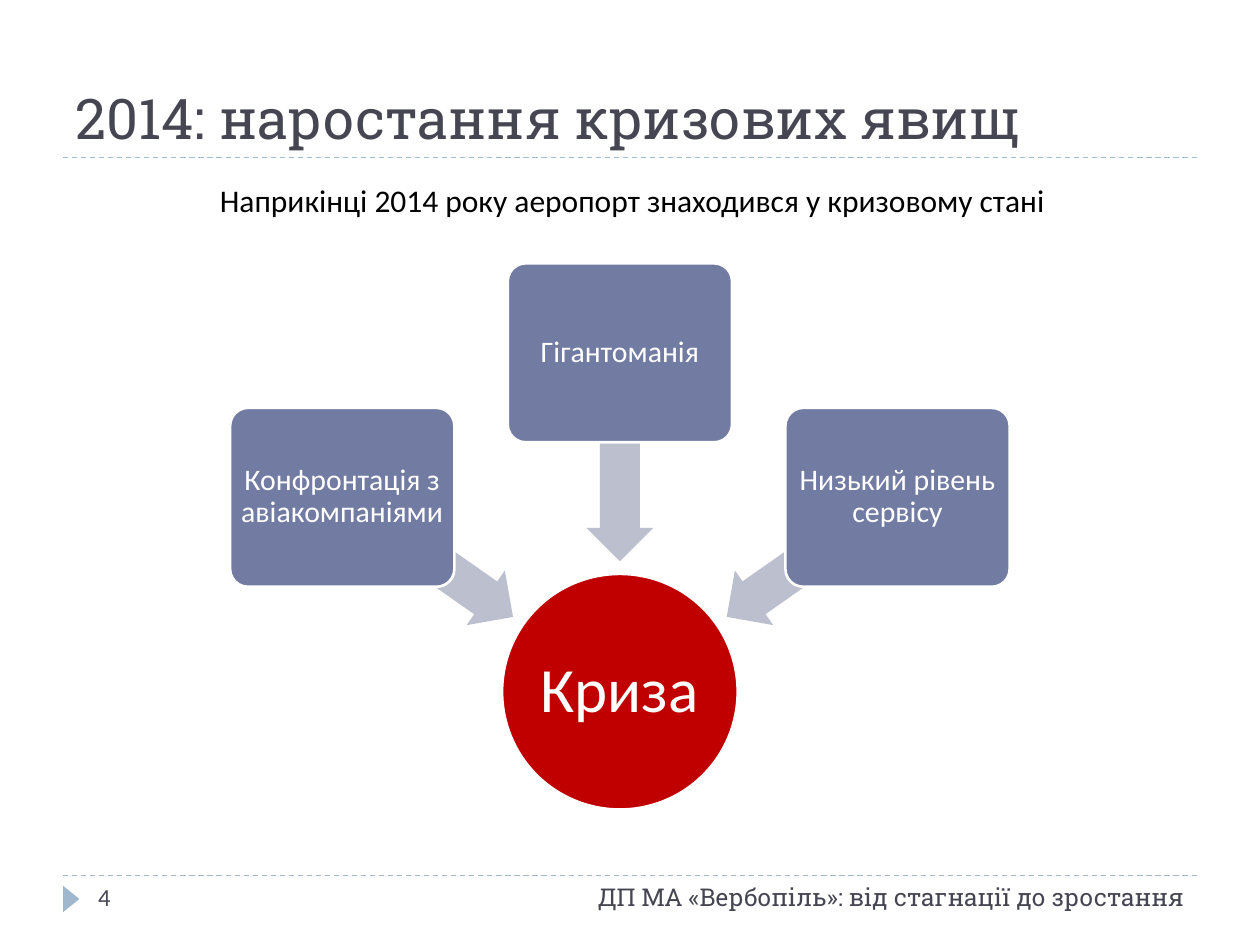
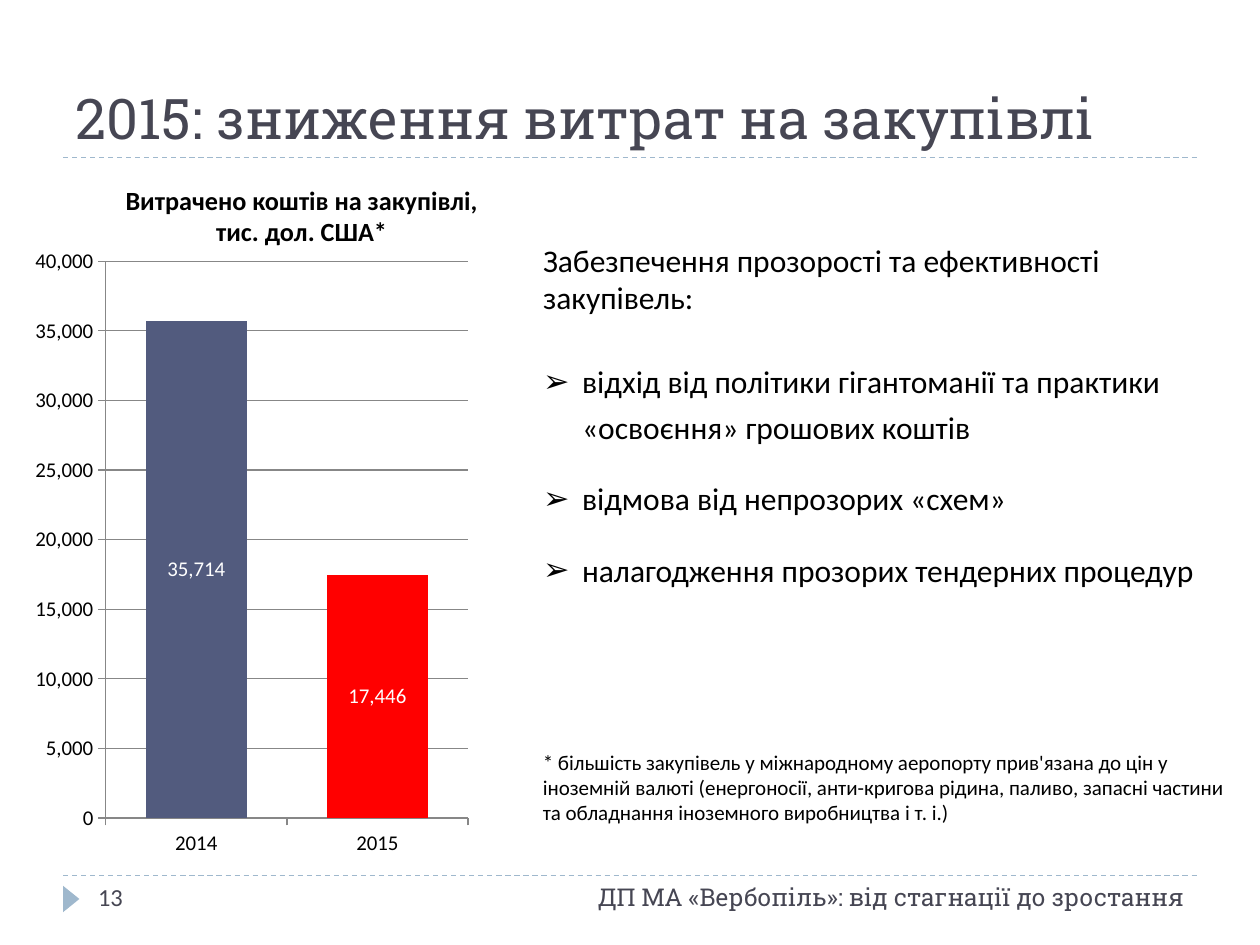
import math

import lxml.etree
import pptx
import pptx.chart.data
import pptx.dml.color
import pptx.enum.chart
import pptx.enum.dml
import pptx.enum.shapes
import pptx.enum.text
import pptx.oxml
import pptx.oxml.ns
import pptx.util

Inches = pptx.util.Inches
Pt = pptx.util.Pt
qn = pptx.oxml.ns.qn
ALIGN = pptx.enum.text.PP_ALIGN
ANCHOR = pptx.enum.text.MSO_ANCHOR
SHAPE = pptx.enum.shapes.MSO_SHAPE

COLORS = {
    "ink": "464653",
    "black": "000000",
    "white": "FFFFFF",
    "rule": "9FB8CD",
    "card": "727CA3",
    "arrow": "BCBFCE",
    "hub": "C00000",
    "bar": "525B7E",
    "mark": "FF0000",
    "grid": "878787",
}
SANS = "Calibri"
SLAB = "Roboto Slab"
FOOTER = "ДП МА «Вербопіль»: від стагнації до зростання"


def color(name):
    return pptx.dml.color.RGBColor.from_string(COLORS[name])


def style(font, size, tint, face=SANS, bold=False):
    font.size = Pt(size)
    font.name = face
    font.bold = bold
    font.color.rgb = color(tint)


def write(frame, text, size, tint="black", face=SANS, bold=False, align=ALIGN.LEFT):
    frame.text = text
    for para in frame.paragraphs:
        para.alignment = align
        for run in para.runs:
            style(run.font, size, tint, face, bold)


def place(shape, left, top, width, height):
    shape.left, shape.top = Inches(left), Inches(top)
    shape.width, shape.height = Inches(width), Inches(height)


def add_text(slide, box, text, size, wrap=True, **look):
    frame = slide.shapes.add_textbox(*map(Inches, box)).text_frame
    frame.word_wrap = wrap
    write(frame, text, size, **look)


def add_rule(slide, top):
    line = slide.shapes.add_connector(
        pptx.enum.shapes.MSO_CONNECTOR.STRAIGHT,
        Inches(0.5), Inches(top), Inches(9.5), Inches(top))
    line.line.color.rgb = color("rule")
    line.line.width = Pt(0.75)
    line.line.dash_style = pptx.enum.dml.MSO_LINE.DASH
    props = line._element.find(qn("p:spPr"))
    lxml.etree.SubElement(props, qn("a:effectLst"))


def add_form(slide, kind, center, width, height, fill, turn=0, edge=False):
    x, y = center
    form = slide.shapes.add_shape(
        kind, Inches(x - width / 2), Inches(y - height / 2),
        Inches(width), Inches(height))
    form.shadow.inherit = False
    form.rotation = turn
    form.fill.solid()
    form.fill.fore_color.rgb = color(fill)
    if edge:
        form.line.color.rgb = color("white")
        form.line.width = Pt(1.5)
    else:
        form.line.fill.background()
    return form


def label(form, text, size, inset):
    frame = form.text_frame
    frame.word_wrap = True
    frame.vertical_anchor = ANCHOR.MIDDLE
    frame.margin_left = frame.margin_right = Inches(inset)
    frame.margin_top = frame.margin_bottom = Inches(inset)
    write(frame, text, size, "white", align=ALIGN.CENTER)
    frame.paragraphs[0].line_spacing = 0.9


def start_slide(deck, layout, title, number):
    slide = deck.slides.add_slide(deck.slide_layouts[layout])
    for top in (1.25, 6.95):
        add_rule(slide, top)
    add_form(slide, SHAPE.ISOSCELES_TRIANGLE, (0.565, 7.135), 0.21, 0.13, "rule", 90)
    head = slide.shapes.title
    place(head, 0.5, 0.17, 9, 1.08)
    head.text_frame.auto_size = pptx.enum.text.MSO_AUTO_SIZE.NONE
    head.text_frame.vertical_anchor = ANCHOR.BOTTOM
    write(head.text_frame, title, 32, "ink", SLAB)
    add_text(slide, (0.68, 6.95, 2.17, 0.4), number, 14, tint="ink")
    add_text(slide, (3.17, 6.95, 6.33, 0.4), FOOTER, 14,
             tint="ink", face=SLAB, align=ALIGN.RIGHT)
    return slide


def add_hub(slide, text, causes):
    hub = (4.92, 5.49)
    disc = add_form(slide, SHAPE.OVAL, hub, 1.87, 1.87, "hub", edge=True)
    label(disc, text, 36, 0.03)
    for i, cause in enumerate(causes):
        angle = 215 + 55 * i

        def spot(reach):
            turn = math.radians(angle)
            return hub[0] + reach * math.cos(turn), hub[1] + reach * math.sin(turn)

        arrow = add_form(slide, SHAPE.LEFT_ARROW, spot(1.86), 1.65, 0.53, "arrow", angle)
        arrow.adjustments[0] = 0.6
        card = add_form(slide, SHAPE.ROUNDED_RECTANGLE, spot(2.69), 1.78, 1.42,
                        "card", edge=True)
        card.adjustments[0] = 0.1
        label(card, cause, 17, 0.04)


def set_plot(chart, x, y, w, h):
    area = chart._chartSpace.chart.plotArea
    for old in area.findall(qn("c:layout")):
        area.remove(old)
    layout = lxml.etree.Element(qn("c:layout"))
    manual = lxml.etree.SubElement(layout, qn("c:manualLayout"))
    parts = {"layoutTarget": "inner", "xMode": "edge", "yMode": "edge",
             "x": x, "y": y, "w": w, "h": h}
    for key, value in parts.items():
        lxml.etree.SubElement(manual, qn("c:" + key)).set("val", str(value))
    area.insert(0, layout)


def add_bars(slide, box, names, values):
    data = pptx.chart.data.CategoryChartData(number_format="#,##0")
    data.categories = names
    data.add_series("Series 1", values)
    kind = pptx.enum.chart.XL_CHART_TYPE.COLUMN_CLUSTERED
    chart = slide.shapes.add_chart(kind, *map(Inches, box), data).chart
    chart.has_title = False
    chart.has_legend = False
    style(chart.font, 12, "black")
    set_plot(chart, 0.153, 0.126, 0.817, 0.802)
    axis = chart.value_axis
    axis.minimum_scale = 0
    axis.tick_labels.number_format = "#,##0"
    axis.tick_labels.number_format_is_linked = False
    for line in (axis.format.line, axis.major_gridlines.format.line,
                 chart.category_axis.format.line):
        line.color.rgb = color("grid")
        line.width = Pt(0.75)
    plot = chart.plots[0]
    plot.gap_width = 80
    plot.vary_by_categories = False
    bars = plot.series[0]
    for fill, tint in ((bars.format.fill, "bar"), (bars.points[1].format.fill, "mark")):
        fill.solid()
        fill.fore_color.rgb = color(tint)
    tags = bars.data_labels
    tags.show_value = True
    tags.number_format = "#,##0"
    tags.number_format_is_linked = False
    tags.position = pptx.enum.chart.XL_LABEL_POSITION.CENTER
    style(tags.font, 12, "white")


def set_bullet(para, mark=None):
    props = para._p.get_or_add_pPr()
    indent = Inches(0.31) if mark else 0
    props.set("marL", str(indent))
    props.set("indent", str(-indent))
    if mark:
        lxml.etree.SubElement(props, qn("a:buFont")).set("typeface", "Arial")
        lxml.etree.SubElement(props, qn("a:buChar")).set("char", mark)
    else:
        lxml.etree.SubElement(props, qn("a:buNone"))


def fill_list(body, box, intro, items):
    place(body, *box)
    frame = body.text_frame
    frame.auto_size = pptx.enum.text.MSO_AUTO_SIZE.NONE
    write(frame, "\n".join([intro, *items]), 18)
    for i, para in enumerate(frame.paragraphs):
        para.space_before = Pt((0, 22, 15)[min(i, 2)])
        para.line_spacing = 1.2 if i else 1.0
        set_bullet(para, "➢" if i else None)


def main():
    deck = pptx.Presentation()
    deck.slide_width, deck.slide_height = Inches(10), Inches(7.5)

    crisis = start_slide(deck, 5, "2014: наростання кризових явищ", "4")
    add_text(crisis, (0.12, 1.39, 9.8, 0.4),
             "Наприкінці 2014 року аеропорт знаходився у кризовому стані",
             18, align=ALIGN.CENTER)
    add_hub(crisis, "Криза", [
        "Конфронтація з авіакомпаніями", "Гігантоманія", "Низький рівень сервісу"])

    costs = start_slide(deck, 1, "2015: зниження витрат на закупівлі", "13")
    add_bars(costs, (0.28, 1.38, 3.54, 5.51), ["2014", "2015"], [35714, 17446])
    add_text(costs, (0.86, 1.41, 3.07, 0.6),
             "Витрачено коштів на закупівлі,\nтис. дол. США*",
             15, wrap=False, bold=True, align=ALIGN.CENTER)
    fill_list(costs.placeholders[1], (4.21, 1.86, 5.67, 3.2),
              "Забезпечення прозорості та ефективності закупівель:", [
                  "відхід від політики гігантоманії та практики «освоєння» грошових коштів",
                  "відмова від непрозорих «схем»",
                  "налагодження прозорих тендерних процедур"])
    add_text(costs, (4.21, 5.9, 5.67, 0.75),
             "* більшість закупівель у міжнародному аеропорту прив'язана до цін у "
             "іноземній валюті (енергоносії, анти-кригова рідина, паливо, запасні "
             "частини та обладнання іноземного виробництва і т. і.)", 12)

    deck.save("out.pptx")


if __name__ == "__main__":
    main()
